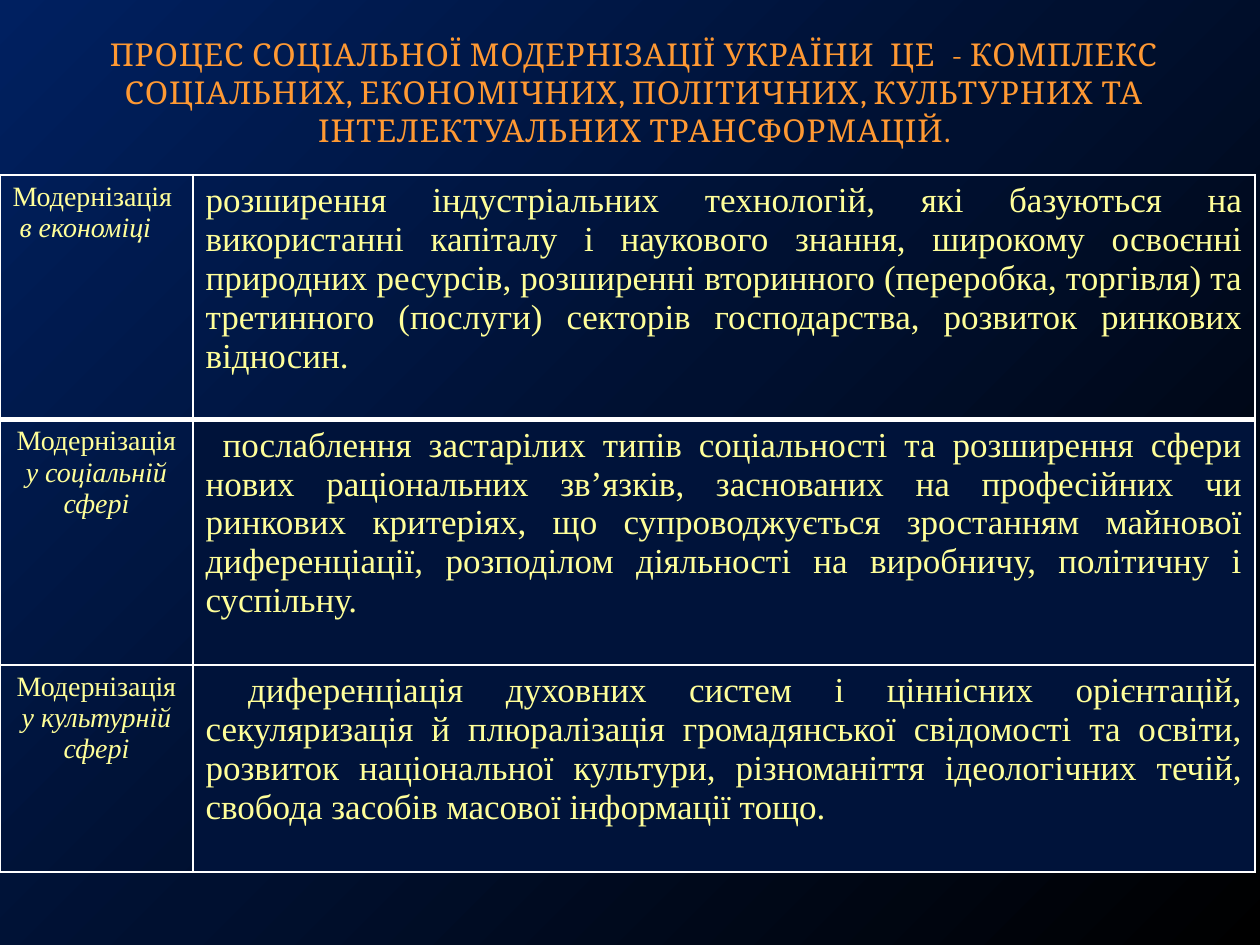
"""Build the slide on the social modernization of Ukraine."""
import copy
from dataclasses import dataclass

import pptx
import pptx.dml.color
import pptx.enum.text
import pptx.oxml
import pptx.oxml.ns
import pptx.presentation
import pptx.slide
import pptx.table
import pptx.text.text
import pptx.util
from pptx.dml.color import RGBColor
from pptx.enum.text import PP_ALIGN
from pptx.util import Cm

NAVY = RGBColor(0x00, 0x20, 0x60)
DARK_NAVY = RGBColor(0x00, 0x10, 0x30)
BLACK = RGBColor(0x00, 0x00, 0x00)
CELL_NAVY = RGBColor(0x00, 0x13, 0x3A)
ORANGE = RGBColor(0xFF, 0x99, 0x33)
YELLOW = RGBColor(0xFF, 0xFF, 0x99)
WHITE = RGBColor(0xFF, 0xFF, 0xFF)

TITLE = (
    "ПРОЦЕС СОЦІАЛЬНОЇ МОДЕРНІЗАЦІЇ УКРАЇНИ  ЦЕ  - КОМПЛЕКС СОЦІАЛЬНИХ, "
    "ЕКОНОМІЧНИХ, ПОЛІТИЧНИХ, КУЛЬТУРНИХ ТА ІНТЕЛЕКТУАЛЬНИХ ТРАНСФОРМАЦІЙ."
)


@dataclass
class Sphere:
    name: str
    description: str
    height: float
    alignment: PP_ALIGN = PP_ALIGN.CENTER
    bottom_width: float = 1
    fill: RGBColor | None = CELL_NAVY


SPHERES = [
    Sphere(
        " в економіці ",
        "розширення індустріальних технологій, які базуються на використанні "
        "капіталу і наукового знання, широкому освоєнні природних ресурсів, "
        "розширенні вторинного (переробка, торгівля) та третинного (послуги) "
        "секторів господарства, розвиток ринкових відносин.",
        4.93, PP_ALIGN.LEFT, 3, None,
    ),
    Sphere(
        "у соціальній сфері",
        " послаблення застарілих типів соціальності та розширення сфери нових "
        "раціональних зв’язків, заснованих на професійних чи ринкових критеріях, "
        "що супроводжується зростанням майнової диференціації, розподілом "
        "діяльності на виробничу, політичну і суспільну.",
        4.95,
    ),
    Sphere(
        "у культурній сфері",
        " диференціація духовних систем і ціннісних орієнтацій, секуляризація й "
        "плюралізація громадянської свідомості та освіти, розвиток національної "
        "культури, різноманіття ідеологічних течій, свобода засобів масової "
        "інформації тощо.",
        4.17,
    ),
]


def paint_background(slide: pptx.slide.Slide) -> None:
    fill = slide.background.fill
    fill.gradient()
    fill.gradient_angle = 315
    stop_list = slide.element.find(".//" + pptx.oxml.ns.qn("a:gsLst"))
    stop_list.append(copy.deepcopy(stop_list[-1]))
    for stop, position, color in zip(
        fill.gradient_stops, (0, 0.5, 1), (NAVY, DARK_NAVY, BLACK)
    ):
        stop.position = position
        stop.color.rgb = color


def format_paragraph(
    paragraph: pptx.text.text._Paragraph, alignment: PP_ALIGN, size: float,
    font_name: str, color: RGBColor, italic: bool = False,
) -> None:
    paragraph.alignment = alignment
    for run in paragraph.runs:
        run.font.size = pptx.util.Pt(size)
        run.font.name = font_name
        run.font.color.rgb = color
        run.font.bold = False
        run.font.italic = italic


def add_title(slide: pptx.slide.Slide) -> None:
    title = slide.shapes.title
    title.left, title.top, title.width, title.height = (
        Cm(0.89), Cm(0.53), Cm(23.8), Cm(2.59)
    )
    frame = title.text_frame
    frame.text = TITLE
    frame.auto_size = pptx.enum.text.MSO_AUTO_SIZE.NONE
    frame.vertical_anchor = pptx.enum.text.MSO_ANCHOR.BOTTOM
    paragraph = frame.paragraphs[0]
    format_paragraph(paragraph, PP_ALIGN.CENTER, 18, "Cambria", ORANGE)
    paragraph.runs[0].font._element.set("spc", "50")


def set_borders(cell: pptx.table._Cell, top: float, bottom: float) -> None:
    properties = cell._tc.get_or_add_tcPr()
    for side, width in (("L", 1), ("R", 1), ("T", top), ("B", bottom)):
        properties.append(pptx.oxml.parse_xml(
            f'<a:ln{side} {pptx.oxml.ns.nsdecls("a")} w="{pptx.util.Pt(width)}">'
            f'<a:solidFill><a:srgbClr val="{WHITE}"/></a:solidFill></a:ln{side}>'
        ))


def add_spheres(slide: pptx.slide.Slide, spheres: list[Sphere]) -> None:
    widths = (3.89, 21.41)
    table = slide.shapes.add_table(
        len(spheres), len(widths), Cm(0), Cm(3.53), Cm(sum(widths)),
        Cm(sum(sphere.height for sphere in spheres)),
    ).table
    table.first_row = table.horz_banding = False
    for column, width in zip(table.columns, widths):
        column.width = Cm(width)
    top_width = 1
    for row, sphere in zip(table.rows, spheres):
        row.height = Cm(sphere.height)
        label, description = row.cells
        label.text = f"Модернізація\n{sphere.name}"
        description.text = sphere.description
        heading, name = label.text_frame.paragraphs
        body = description.text_frame.paragraphs[0]
        for paragraph, alignment, size, italic in (
            (heading, sphere.alignment, 16, False),
            (name, sphere.alignment, 16, True),
            (body, PP_ALIGN.JUSTIFY, 20, False),
        ):
            format_paragraph(
                paragraph, alignment, size, "Times New Roman", YELLOW, italic
            )
        for cell, color in ((label, None), (description, sphere.fill)):
            set_borders(cell, top_width, sphere.bottom_width)
            if color is None:
                cell.fill.background()
            else:
                cell.fill.solid()
                cell.fill.fore_color.rgb = color
        top_width = sphere.bottom_width


def main() -> None:
    presentation = pptx.Presentation()
    presentation.slide_width, presentation.slide_height = Cm(25.4), Cm(19.05)
    slide = presentation.slides.add_slide(presentation.slide_layouts[5])
    paint_background(slide)
    add_title(slide)
    add_spheres(slide, SPHERES)
    presentation.save("out.pptx")


if __name__ == "__main__":
    main()
